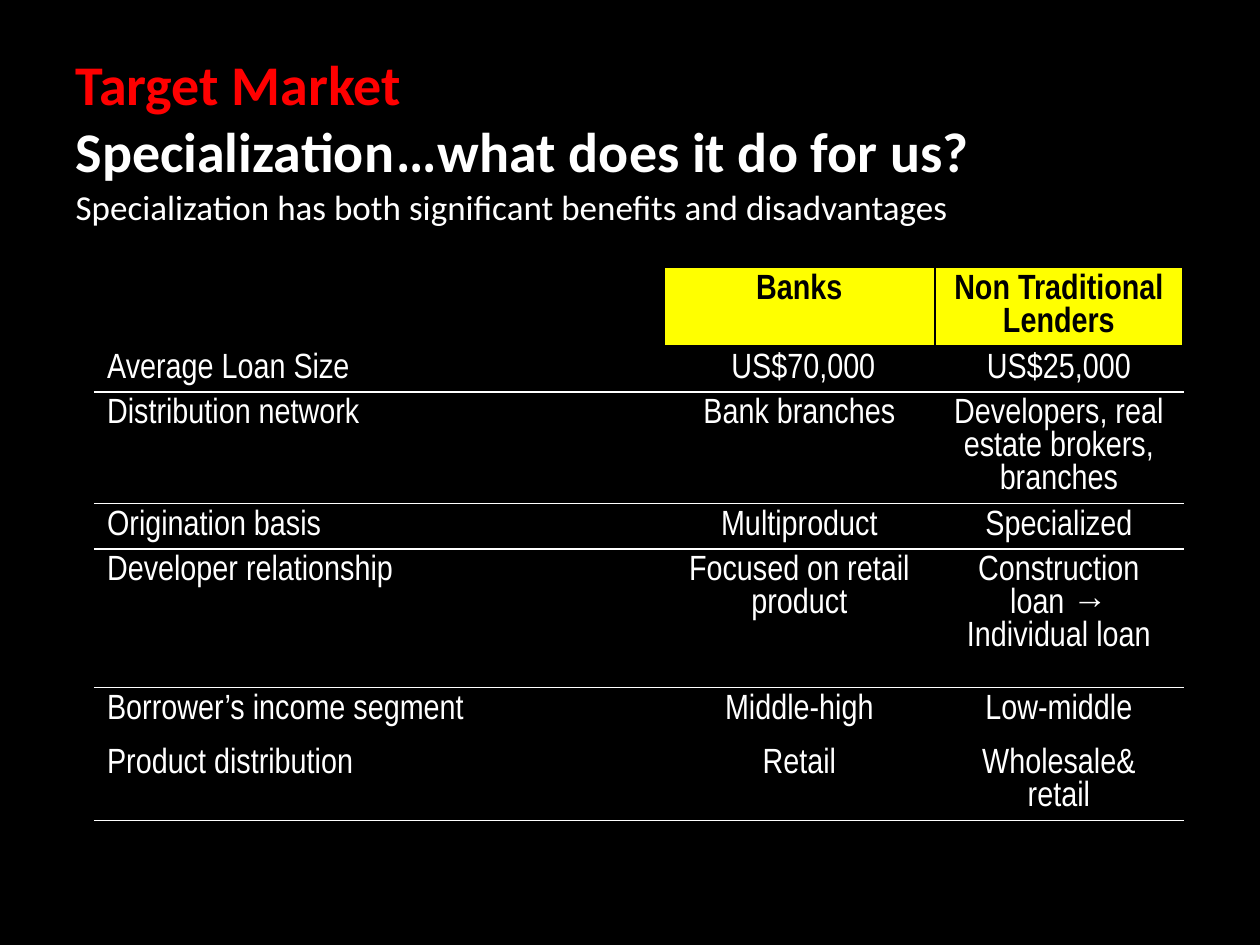
from lxml import etree
from pptx import Presentation
from pptx.dml.color import RGBColor
from pptx.enum.text import MSO_ANCHOR, MSO_AUTO_SIZE, PP_ALIGN
from pptx.oxml.ns import qn
from pptx.util import Pt

LEFT, CENTER, JUSTIFY = PP_ALIGN.LEFT, PP_ALIGN.CENTER, PP_ALIGN.JUSTIFY
TOP, MIDDLE = MSO_ANCHOR.TOP, MSO_ANCHOR.MIDDLE
NO_AUTOFIT = MSO_AUTO_SIZE.NONE

BLACK, WHITE, RED, YELLOW = "000000", "FFFFFF", "FF0000", "FFFF00"

COLUMN_WIDTHS = [325.4, 154.8, 141.8]
ROW_HEIGHTS = [23, 25.2, 23, 23, 79.2, 31, 25.2]
ROW_RULES = [BLACK, WHITE, WHITE, WHITE, WHITE, BLACK, WHITE]
LENDER_ROWS = [
    ["", "Banks", "Non Traditional Lenders"],
    ["Average Loan Size", " US$70,000", "US$25,000"],
    ["Distribution network", "Bank branches", "Developers, real estate brokers, branches"],
    ["Origination basis", "Multiproduct", "Specialized"],
    ["Developer relationship", "Focused on retail product", "Construction loan → Individual loan"],
    ["Borrower’s income segment", "Middle-high", "Low-middle"],
    ["Product distribution", "Retail", "Wholesale& retail"],
]


def rgb(value):
    return RGBColor.from_string(value)


class SlideBuilder:
    heading_font = "Calibri"
    table_font = "Arial Narrow"
    title_size = 32
    text_size = 20
    space_before = 4

    def __init__(self, presentation):
        self.slide = presentation.slides.add_slide(presentation.slide_layouts[1])
        self.slide.background.fill.solid()
        self.slide.background.fill.fore_color.rgb = rgb(BLACK)

    def style_font(self, font, name, size, color, bold=False):
        font.name, font.size, font.bold = name, Pt(size), bold
        font.color.rgb = rgb(color)

    def add_run(self, paragraph, text, *style):
        run = paragraph.add_run()
        run.text = text
        self.style_font(run.font, *style)

    def place(self, shape, left, top, width, height, anchor):
        """Move a placeholder and return its first paragraph."""
        shape.left, shape.top = Pt(left), Pt(top)
        shape.width, shape.height = Pt(width), Pt(height)
        frame = shape.text_frame
        frame.auto_size = NO_AUTOFIT
        frame.word_wrap = True
        frame.vertical_anchor = anchor
        paragraph = frame.paragraphs[0]
        paragraph.alignment = LEFT
        return paragraph

    def title(self, box, lines):
        paragraph = self.place(self.slide.shapes.title, *box, MIDDLE)
        for index, line in enumerate(lines):
            if index:
                paragraph.add_line_break()
            for text, font_name, color in line:
                self.add_run(paragraph, text, font_name, self.title_size, color, True)

    def body(self, box, text):
        paragraph = self.place(self.slide.placeholders[1], *box, TOP)
        paragraph.space_before = Pt(self.space_before)
        properties = paragraph._p.get_or_add_pPr()
        properties.set("marL", str(Pt(27)))
        properties.set("indent", str(Pt(-27)))
        etree.SubElement(properties, qn("a:buNone"))
        self.add_run(paragraph, text, self.heading_font, self.text_size, WHITE)

    def cell_borders(self, cell, top, bottom):
        properties = cell._tc.get_or_add_tcPr()
        sides = [("L", BLACK), ("R", BLACK), ("T", top), ("B", bottom)]
        for position, (side, color) in enumerate(sides):
            line = etree.Element(qn(f"a:ln{side}"), w=str(Pt(1)))
            fill = etree.SubElement(line, qn("a:solidFill"))
            etree.SubElement(fill, qn("a:srgbClr"), val=color)
            properties.insert(position, line)

    def cell(self, cell, text, alignment, is_header):
        if is_header:
            cell.fill.solid()
            cell.fill.fore_color.rgb = rgb(YELLOW)
        else:
            cell.fill.background()
        cell.vertical_anchor = TOP
        paragraph = cell.text_frame.paragraphs[0]
        paragraph.alignment = alignment
        paragraph.space_before = Pt(self.space_before)
        color = BLACK if is_header else WHITE
        style = (self.table_font, self.text_size, color, is_header)
        if text:
            self.add_run(paragraph, text, *style)
        else:
            self.style_font(paragraph.font, *style)

    def table(self, left, top, rows, widths, heights, rules):
        """Draw a table whose rules give the line colour below each row."""
        table = self.slide.shapes.add_table(
            len(rows), len(widths), Pt(left), Pt(top), Pt(sum(widths)), Pt(sum(heights))
        ).table
        table.first_row = table.horz_banding = False
        for column, width in zip(table.columns, widths):
            column.width = Pt(width)
        for row_index, texts in enumerate(rows):
            table.rows[row_index].height = Pt(heights[row_index])
            line_above = rules[row_index - 1] if row_index else BLACK
            for column_index, text in enumerate(texts):
                cell = table.cell(row_index, column_index)
                alignment = CENTER if column_index else JUSTIFY
                self.cell(cell, text, alignment, row_index == 0 and column_index > 0)
                self.cell_borders(cell, line_above, rules[row_index])


def main():
    presentation = Presentation()
    presentation.slide_width, presentation.slide_height = Pt(720), Pt(540)
    builder = SlideBuilder(presentation)
    builder.title((36, 21.6, 655.2, 90), [
        [("Target Market", "Calibri", RED)],
        [("Specialization", "Calibri", WHITE), ("…", "Cambria", WHITE),
         ("what does it do for us?", "Calibri", WHITE)],
    ])
    builder.body((36, 102.2, 640, 125.3),
                 "Specialization has both significant benefits and disadvantages")
    builder.table(54, 152.9, LENDER_ROWS, COLUMN_WIDTHS, ROW_HEIGHTS, ROW_RULES)
    presentation.save("out.pptx")


if __name__ == "__main__":
    main()
